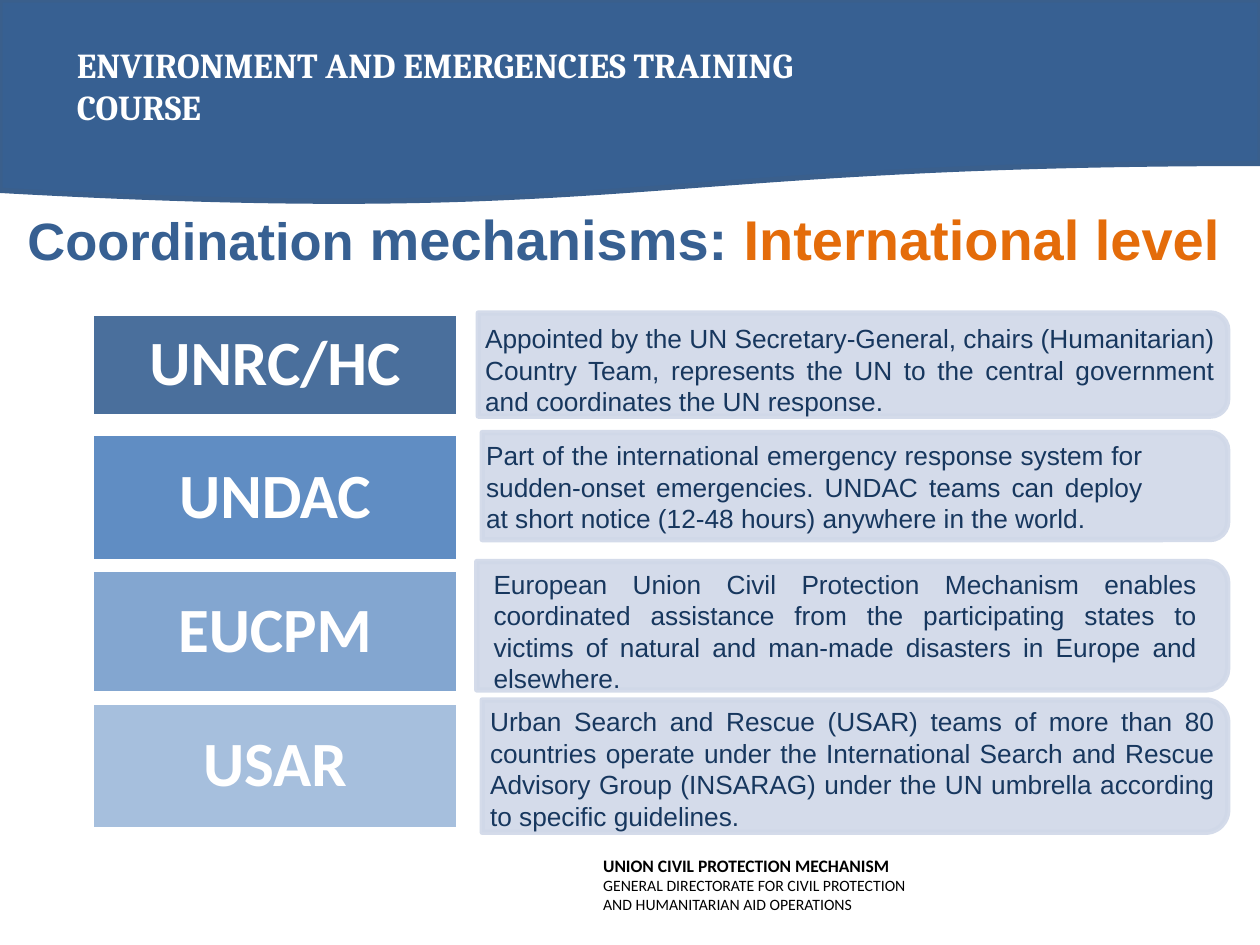
import dataclasses
import typing

import lxml.etree
import pptx
import pptx.dml.color
import pptx.enum.shapes
import pptx.enum.text
import pptx.oxml.ns
import pptx.util

Cm = pptx.util.Cm
Pt = pptx.util.Pt
Shapes = pptx.enum.shapes.MSO_SHAPE
Align = pptx.enum.text.PP_ALIGN
Anchor = pptx.enum.text.MSO_ANCHOR

BLUE = "376092"
LIGHT_BLUE = "4F81BD"
PANEL_BLUE = "D0D8E8"
NAVY = "17375E"
ORANGE = "E46C0A"
WHITE = "FFFFFF"
BLACK = "000000"

LABEL_LEFT, LABEL_WIDTH = 1.85, 7.39
PANEL_RIGHT = 24.75


@dataclasses.dataclass(frozen=True)
class Box:
    left: float
    top: float
    width: float
    height: float

    def lengths(self) -> tuple:
        return Cm(self.left), Cm(self.top), Cm(self.width), Cm(self.height)


@dataclasses.dataclass(frozen=True)
class Mechanism:
    name: str
    description: str
    color: str
    opacity: int
    label_top: float
    label_height: float
    panel_left: float
    panel_top: float
    panel_height: float
    text_box: Box


MECHANISMS = [
    Mechanism(
        "UNRC/HC",
        "Appointed by the UN Secretary-General, chairs (Humanitarian) Country Team, "
        "represents the UN to the central government and coordinates the UN response.",
        BLUE, 90, 6.32, 2.08, 9.64, 6.31, 2.08, Box(9.53, 6.38, 15.21, 2.18),
    ),
    Mechanism(
        "UNDAC",
        "Part of the international emergency response system for sudden-onset emergencies. "
        "UNDAC teams can deploy at short notice (12-48 hours) anywhere in the world.",
        LIGHT_BLUE, 90, 8.74, 2.59, 9.72, 8.72, 2.16, Box(9.55, 8.74, 13.74, 2.18),
    ),
    Mechanism(
        "EUCPM",
        "European Union Civil Protection Mechanism enables coordinated assistance from the "
        "participating states to victims of natural and man-made disasters in Europe and elsewhere.",
        LIGHT_BLUE, 70, 11.48, 2.51, 9.61, 11.32, 2.59, Box(9.7, 11.33, 14.68, 2.82),
    ),
    Mechanism(
        "USAR",
        "Urban Search and Rescue (USAR) teams of more than 80 countries operate under the "
        "International Search and Rescue Advisory Group (INSARAG) under the UN umbrella "
        "according to specific guidelines.",
        LIGHT_BLUE, 50, 14.15, 2.57, 9.72, 14.11, 2.67, Box(9.63, 14.1, 15.11, 2.82),
    ),
]


def set_color(fill: typing.Any, color: str, opacity: int = 100) -> None:
    fill.solid()
    fill.fore_color.rgb = pptx.dml.color.RGBColor.from_string(color)
    if opacity < 100:
        color_element = fill._xPr.find(
            pptx.oxml.ns.qn("a:solidFill")
        ).find(pptx.oxml.ns.qn("a:srgbClr"))
        alpha = lxml.etree.SubElement(color_element, pptx.oxml.ns.qn("a:alpha"))
        alpha.set("val", str(opacity * 1000))


def write_text(paragraph: typing.Any, text: str, *, size: float, font: str, color: str,
               bold: bool = False, align: Align = Align.LEFT) -> None:
    paragraph.alignment = align
    run = paragraph.add_run()
    run.text = text
    run.font.size = Pt(size)
    run.font.name = font
    run.font.bold = bold
    set_color(run.font.fill, color)


def add_text_box(slide: typing.Any, box: Box, text: str, **text_format: typing.Any) -> None:
    frame = slide.shapes.add_textbox(*box.lengths()).text_frame
    frame.word_wrap = True
    write_text(frame.paragraphs[0], text, **text_format)


def add_filled_shape(slide: typing.Any, kind: Shapes, box: Box, color: str, line_color: str,
                     opacity: int = 100, line_opacity: int = 100) -> typing.Any:
    shape = slide.shapes.add_shape(kind, *box.lengths())
    shape.shadow.inherit = False
    set_color(shape.fill, color, opacity)
    set_color(shape.line.fill, line_color, line_opacity)
    shape.line.width = Pt(3)
    return shape


def add_title(slide: typing.Any) -> None:
    title = slide.shapes.title
    title.left, title.top, title.width, title.height = Box(0.3, 4.11, 25.1, 1.4).lengths()
    frame = title.text_frame
    frame.auto_size = pptx.enum.text.MSO_AUTO_SIZE.NONE
    frame.vertical_anchor = Anchor.MIDDLE
    for text, size, color in (
        ("Coordination", 30, BLUE),
        (" mechanisms: ", 32, BLUE),
        ("International level", 32, ORANGE),
    ):
        write_text(frame.paragraphs[0], text, size=size, font="Arial", color=color, bold=True)


def add_label(slide: typing.Any, mechanism: Mechanism) -> None:
    box = Box(LABEL_LEFT, mechanism.label_top, LABEL_WIDTH, mechanism.label_height)
    label = add_filled_shape(slide, Shapes.RECTANGLE, box, mechanism.color, WHITE, mechanism.opacity)
    frame = label.text_frame
    frame.vertical_anchor = Anchor.MIDDLE
    paragraph = frame.paragraphs[0]
    paragraph.line_spacing = 0.9
    write_text(paragraph, mechanism.name, size=36, font="Calibri", color=WHITE,
               bold=True, align=Align.CENTER)


def add_panel(slide: typing.Any, mechanism: Mechanism) -> None:
    length = PANEL_RIGHT - mechanism.panel_left
    thickness = mechanism.panel_height
    shift = (length - thickness) / 2
    upright = Box(mechanism.panel_left + shift, mechanism.panel_top - shift, thickness, length)
    panel = add_filled_shape(slide, Shapes.ROUND_2_SAME_RECTANGLE, upright,
                             PANEL_BLUE, PANEL_BLUE, 90, 90)
    panel.rotation = 90
    add_text_box(slide, mechanism.text_box, mechanism.description, size=15, font="Arial",
                 color=NAVY, align=Align.JUSTIFY)


def main() -> None:
    presentation = pptx.Presentation()
    presentation.slide_width = Cm(25.4)
    presentation.slide_height = Cm(19.05)
    slide = presentation.slides.add_slide(presentation.slide_layouts[5])

    add_filled_shape(slide, Shapes.FLOWCHART_DOCUMENT, Box(0, 0, 25.4, 4.11), BLUE, "3A5F8C")
    add_text_box(slide, Box(1.3, 0.76, 17.58, 1.96), "ENVIRONMENT AND EMERGENCIES TRAINING COURSE",
                 size=20, font="Cambria", color=WHITE, bold=True)
    add_title(slide)

    for mechanism in MECHANISMS:
        add_label(slide, mechanism)
        add_panel(slide, mechanism)

    add_text_box(slide, Box(11.91, 17.12, 7.21, 0.69), "UNION CIVIL PROTECTION MECHANISM",
                 size=10, font="Calibri", color=BLACK, bold=True)
    add_text_box(slide, Box(11.91, 17.53, 7.21, 1.02),
                 "GENERAL DIRECTORATE FOR CIVIL PROTECTION AND HUMANITARIAN AID OPERATIONS",
                 size=9, font="Calibri", color=BLACK)

    presentation.save("out.pptx")


if __name__ == "__main__":
    main()
